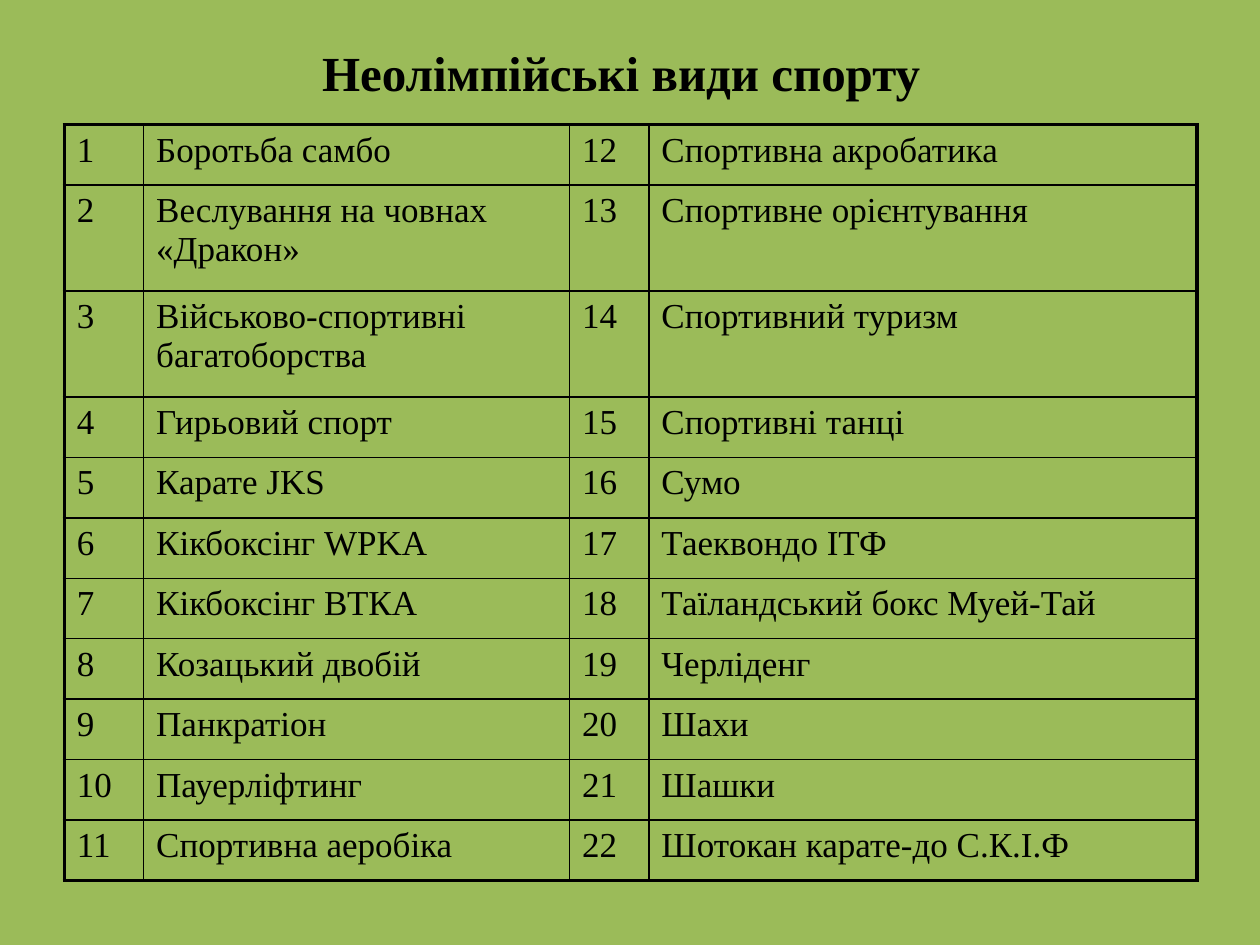
from lxml import etree
from pptx import Presentation
from pptx.dml.color import RGBColor
from pptx.enum.text import MSO_ANCHOR, PP_ALIGN
from pptx.oxml.ns import qn
from pptx.util import Inches, Pt

CENTER = PP_ALIGN.CENTER
MIDDLE = MSO_ANCHOR.MIDDLE
TITLE_ONLY = 5

FONT = "Times New Roman"
BLACK = "000000"
GREEN = "9BBB59"
OUTER_LINE = Pt(2.25)
INNER_LINE = Pt(1)

SPORTS = [
    "Боротьба самбо",
    "Веслування на човнах «Дракон»",
    "Військово-спортивні багатоборства",
    "Гирьовий спорт",
    "Карате JKS",
    "Кікбоксінг WPKA",
    "Кікбоксінг ВТКА",
    "Козацький двобій",
    "Панкратіон",
    "Пауерліфтинг",
    "Спортивна аеробіка",
    "Спортивна акробатика",
    "Спортивне орієнтування",
    "Спортивний туризм",
    "Спортивні танці",
    "Сумо",
    "Таеквондо ІТФ",
    "Таїландський бокс Муей-Тай",
    "Черліденг",
    "Шахи",
    "Шашки",
    "Шотокан карате-до С.К.І.Ф",
]
COLUMN_WIDTHS = [0.63, 3.38, 0.63, 4.35]
ROW_HEIGHT = 0.48
TALL_ROW_HEIGHT = 0.84
TALL_ROWS = {1, 2}


def color(hex_value):
    return RGBColor.from_string(hex_value)


def add_text(para, text, size, bold=False):
    span = para.add_run()
    span.text = text
    span.font.name = FONT
    span.font.size = Pt(size)
    span.font.bold = bold
    span.font.color.rgb = color(BLACK)


def set_borders(cell, widths):
    """Draw the left, right, top and bottom cell lines with the given widths."""
    properties = cell._tc.get_or_add_tcPr()
    for index, (side, width) in enumerate(zip("LRTB", widths)):
        line = etree.Element(qn(f"a:ln{side}"), w=str(int(width)))
        fill = etree.SubElement(line, qn("a:solidFill"))
        etree.SubElement(fill, qn("a:srgbClr"), val=BLACK)
        properties.insert(index, line)


def place_title(page, left, top, width, height):
    title = page.shapes.title
    title.left, title.top, title.width, title.height = left, top, width, height
    frame = title.text_frame
    frame.word_wrap = True
    frame.vertical_anchor = MIDDLE
    para = frame.paragraphs[0]
    para.alignment = CENTER
    add_text(para, "Неолімпійські види спорту", 28, bold=True)


def place_sports_table(page, left, top, width, height):
    """List the numbered sports in two halves, side by side."""
    row_count = len(SPORTS) // 2
    column_count = len(COLUMN_WIDTHS)
    table = page.shapes.add_table(
        row_count, column_count, left, top, width, height).table
    table.first_row = False
    table.horz_banding = False
    for column, column_width in zip(table.columns, COLUMN_WIDTHS):
        column.width = Inches(column_width)

    for row_index, row in enumerate(table.rows):
        tall = row_index in TALL_ROWS
        row.height = Inches(TALL_ROW_HEIGHT if tall else ROW_HEIGHT)
        for column_index, cell in enumerate(row.cells):
            half, is_name = divmod(column_index, 2)
            number = half * row_count + row_index + 1
            text = SPORTS[number - 1] if is_name else str(number)
            add_text(cell.text_frame.paragraphs[0], text, 20)
            cell.fill.background()
            on_edge = [
                column_index == 0,
                column_index == column_count - 1,
                row_index == 0,
                row_index == row_count - 1,
            ]
            set_borders(
                cell, [OUTER_LINE if edge else INNER_LINE for edge in on_edge])


def main():
    deck = Presentation()
    deck.slide_width, deck.slide_height = Inches(10), Inches(7.5)
    page = deck.slides.add_slide(deck.slide_layouts[TITLE_ONLY])
    page.background.fill.solid()
    page.background.fill.fore_color.rgb = color(GREEN)
    place_title(page, Inches(0.43), Inches(0.22), Inches(9), Inches(0.7))
    place_sports_table(page, Inches(0.51), Inches(0.99), Inches(9), Inches(5.98))
    deck.save("out.pptx")


if __name__ == "__main__":
    main()
